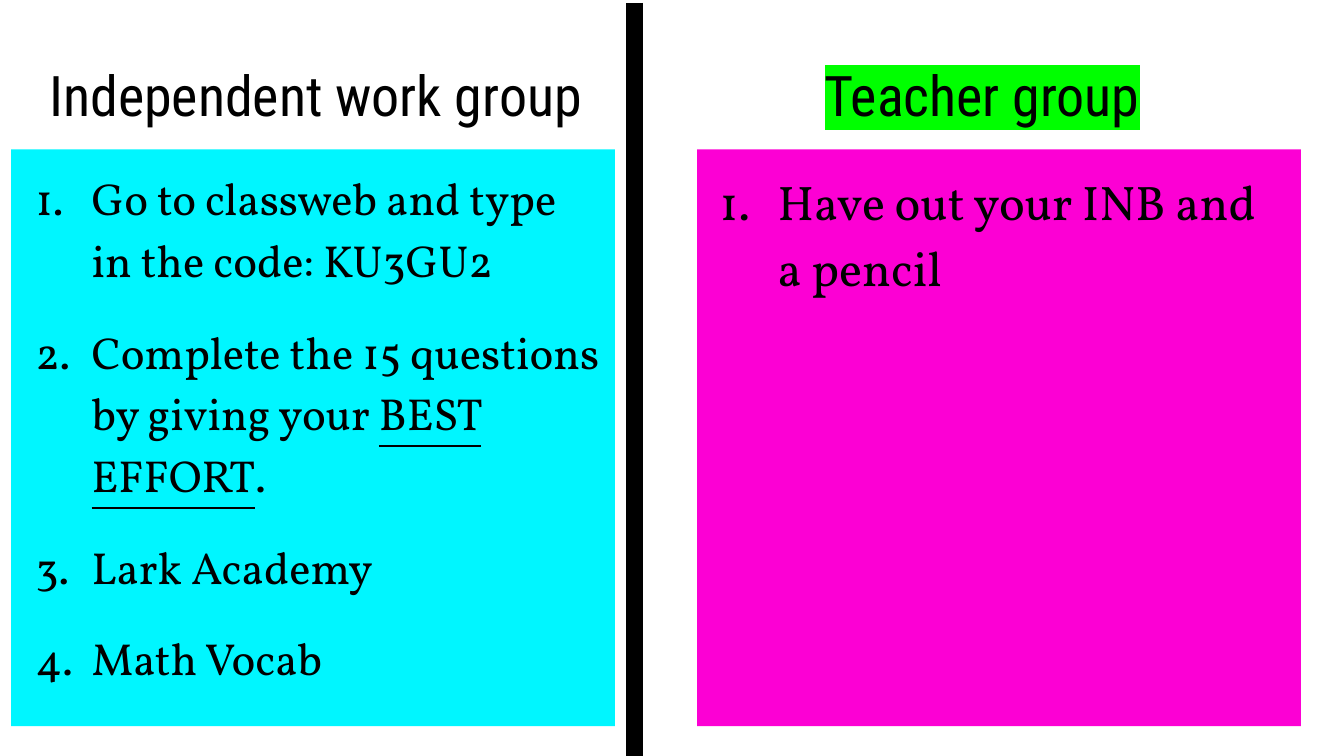
from lxml.etree import SubElement as Sub
from pptx import Presentation
from pptx.dml.color import RGBColor as RGB
from pptx.enum.shapes import MSO_CONNECTOR as LINE, MSO_SHAPE as SHAPE
from pptx.enum.text import MSO_ANCHOR as ANCHOR, PP_ALIGN as ALIGN
from pptx.oxml.ns import qn
from pptx.util import Pt

# Each item is a list of (text, underlined) runs.
GROUPS = [
    {"title": "Independent work group", "title_x": 16.5, "x": 6,
     "fill": "00F6FF", "mark": None, "size": 24, "hang": 30,
     "items": [
         [("Go to classweb and type in the code: KU3GU2", False)],
         [("Complete the 15 questions by giving your ", False),
          ("BEST EFFORT", True), (".", False)],
         [("Lark Academy", False)],
         [("Math Vocab", False)],
     ]},
    {"title": "Teacher group", "title_x": 373.5, "x": 373.5,
     "fill": "FC00D4", "mark": "00FF00", "size": 26, "hang": 31,
     "items": [[("Have out your INB and a pencil", False)]]},
]

THEME = {"ink": "000000", "paper": "FFFFFF", "head": "Roboto Condensed",
         "body": "Vollkorn", "head_size": 30}
WIDE, HIGH = 720, 405
HEAD_Y, HEAD_W, HEAD_H = 23, 305.5, 45.5
CARD_Y, CARD_W, CARD_H = 80, 323.5, 309
RULE_X, RULE_W = 340, 9
PAD, INDENT = 7.2, 36


def color(code):
    return RGB.from_string(code)


def style(run, face, size):
    run.font.name = face
    run.font.size = Pt(size)
    run.font.color.rgb = color(THEME["ink"])


def set_frame(frame, top=PAD):
    frame.word_wrap = True
    frame.vertical_anchor = ANCHOR.TOP
    frame.margin_left = frame.margin_right = frame.margin_bottom = Pt(PAD)
    frame.margin_top = Pt(top)


def highlight(run, code):
    mark = run.font._element.makeelement(qn("a:highlight"))
    Sub(mark, qn("a:srgbClr"), val=code)
    run.font._element.find(qn("a:solidFill")).addnext(mark)


def number(para, hang):
    """Give the paragraph a hanging automatic number."""
    props = para._p.get_or_add_pPr()
    props.set("marL", str(Pt(INDENT)))
    props.set("indent", str(-Pt(hang)))
    tint = Sub(props, qn("a:buClr"))
    Sub(tint, qn("a:srgbClr"), val=THEME["ink"])
    Sub(props, qn("a:buFont"), typeface=THEME["body"])
    Sub(props, qn("a:buAutoNum"), type="arabicPeriod")


def add_title(slide, group):
    box = slide.shapes.add_textbox(
        Pt(group["title_x"]), Pt(HEAD_Y), Pt(HEAD_W), Pt(HEAD_H))
    set_frame(box.text_frame, top=9.5)
    para = box.text_frame.paragraphs[0]
    para.text = group["title"]
    para.alignment = ALIGN.CENTER
    run = para.runs[0]
    style(run, THEME["head"], THEME["head_size"])
    if group["mark"]:
        highlight(run, group["mark"])


def add_card(slide, group):
    card = slide.shapes.add_shape(
        SHAPE.RECTANGLE, Pt(group["x"]), Pt(CARD_Y), Pt(CARD_W), Pt(CARD_H))
    card.shadow.inherit = False
    card.fill.solid()
    card.fill.fore_color.rgb = color(group["fill"])
    card.line.fill.background()
    frame = card.text_frame
    set_frame(frame)
    for i, item in enumerate(group["items"]):
        para = frame.add_paragraph() if i else frame.paragraphs[0]
        para.alignment = ALIGN.LEFT
        para.line_spacing = 1.15
        para.space_after = Pt(16)
        number(para, group["hang"])
        for text, under in item:
            run = para.add_run()
            run.text = text
            style(run, THEME["body"], group["size"])
            run.font.underline = under


def add_rule(slide):
    rule = slide.shapes.add_connector(
        LINE.STRAIGHT, Pt(RULE_X), Pt(1.5), Pt(RULE_X), Pt(407.5))
    rule.line.width = Pt(RULE_W)
    rule.line.color.rgb = color(THEME["ink"])
    Sub(rule._element.spPr, qn("a:effectLst"))


def main():
    deck = Presentation()
    deck.slide_width, deck.slide_height = Pt(WIDE), Pt(HIGH)
    slide = deck.slides.add_slide(deck.slide_layouts[6])
    slide.background.fill.solid()
    slide.background.fill.fore_color.rgb = color(THEME["paper"])
    for group in GROUPS:
        add_title(slide, group)
        add_card(slide, group)
    add_rule(slide)
    deck.save("out.pptx")


if __name__ == "__main__":
    main()
